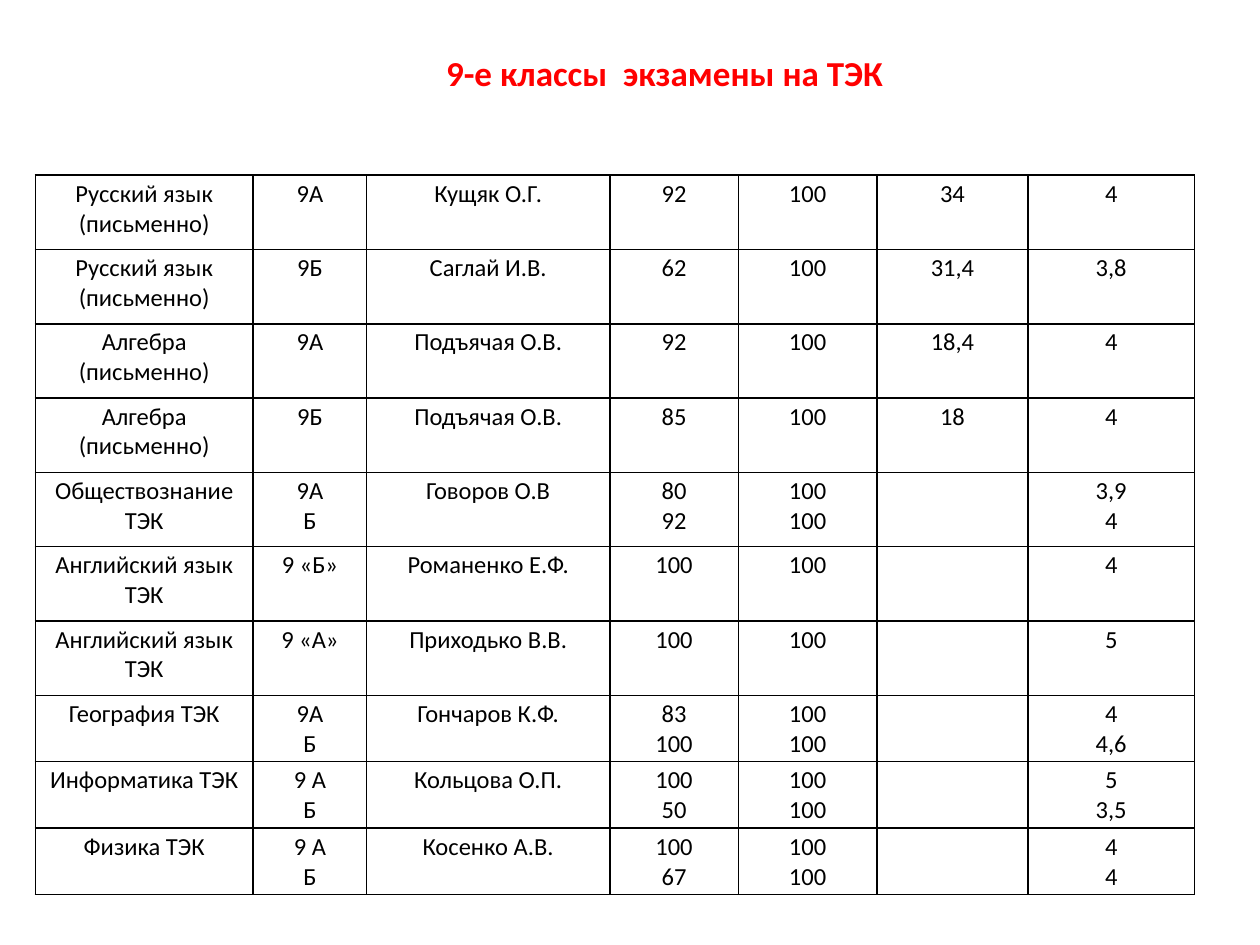
from pptx import Presentation
from pptx import util as u
from pptx.dml.color import RGBColor
from pptx.enum import text
from pptx.oxml import parse_xml
from pptx.oxml.ns import nsdecls

COLORS = {"title": "FF0000", "text": "000000", "border": "000000"}
FONT = "Calibri"
TITLE = "9-е классы  экзамены на ТЭК"
COLUMN_WIDTHS = [1.73, 0.9, 1.93, 1.02, 1.1, 1.2, 1.32]
ROW_HEIGHTS = [0.59] * 7 + [0.52] * 3
EXAMS = [
    ["Русский язык (письменно)", "9А", "Кущяк О.Г.", "92", "100", "34", "4"],
    ["Русский язык\n(письменно)", "9Б", "Саглай И.В.", "62", "100", "31,4", "3,8"],
    ["Алгебра\n(письменно)", "9А", "Подъячая О.В.", "92", "100", "18,4", "4"],
    ["Алгебра\n(письменно)", "9Б", "Подъячая О.В.", "85", "100", "18", "4"],
    ["Обществознание\nТЭК", "9А\nБ", "Говоров О.В", "80\n92", "100\n100", "", "3,9\n4"],
    ["Английский язык ТЭК", "9 «Б»", "Романенко Е.Ф.", "100", "100", "", "4"],
    ["Английский язык ТЭК", "9 «А»", "Приходько В.В.", "100", "100", "", "5"],
    ["География ТЭК", "9А\nБ", "Гончаров К.Ф.", "83\n100", "100\n100", "", "4\n4,6"],
    ["Информатика ТЭК", "9 А\nБ", "Кольцова О.П.", "100\n50", "100\n100", "", "5\n3,5"],
    ["Физика ТЭК", "9 А\nБ", "Косенко А.В.", "100\n67", "100\n100", "", "4\n4"],
]


def format_paragraph(paragraph, size, color, bold=False):
    paragraph.alignment = text.PP_ALIGN.CENTER
    font = paragraph.font
    font.name, font.size, font.bold = FONT, u.Pt(size), bold
    font.color.rgb = RGBColor.from_string(COLORS[color])


def add_title(slide):
    title = slide.shapes.title
    title.left, title.top = u.Inches(2.32), u.Inches(0.36)
    title.width, title.height = u.Inches(5.91), u.Inches(0.44)
    frame = title.text_frame
    frame.text = TITLE
    frame.vertical_anchor = text.MSO_ANCHOR.TOP
    frame.auto_size = text.MSO_AUTO_SIZE.SHAPE_TO_FIT_TEXT
    format_paragraph(frame.paragraphs[0], 20, "title", bold=True)


def set_borders(cell, width=1):
    properties = cell._tc.get_or_add_tcPr()
    for position, side in enumerate(("lnL", "lnR", "lnT", "lnB")):
        line = parse_xml(
            f'<a:{side} {nsdecls("a")} w="{u.Pt(width)}"><a:solidFill>'
            f'<a:srgbClr val="{COLORS["border"]}"/></a:solidFill></a:{side}>'
        )
        properties.insert(position, line)


def fill_cell(cell, content):
    cell.text = content
    cell.margin_left = cell.margin_right = u.Inches(0.03)
    cell.margin_top = cell.margin_bottom = u.Inches(0.03)
    cell.fill.background()
    set_borders(cell)
    for paragraph in cell.text_frame.paragraphs:
        format_paragraph(paragraph, 14, "text")


def add_exam_table(slide):
    frame = slide.shapes.add_table(
        len(EXAMS), len(COLUMN_WIDTHS), u.Inches(0.28), u.Inches(1.39),
        u.Inches(sum(COLUMN_WIDTHS)), u.Inches(sum(ROW_HEIGHTS)))
    table = frame.table
    table.first_row = table.horz_banding = False
    for column, width in zip(table.columns, COLUMN_WIDTHS):
        column.width = u.Inches(width)
    for row, height, exam in zip(table.rows, ROW_HEIGHTS, EXAMS):
        row.height = u.Inches(height)
        for cell, content in zip(row.cells, exam):
            fill_cell(cell, content)


def main():
    presentation = Presentation()
    presentation.slide_width, presentation.slide_height = u.Inches(10), u.Inches(7.5)
    title_only = presentation.slide_layouts[5]
    slide = presentation.slides.add_slide(title_only)
    add_title(slide)
    add_exam_table(slide)
    presentation.save("out.pptx")


if __name__ == "__main__":
    main()
